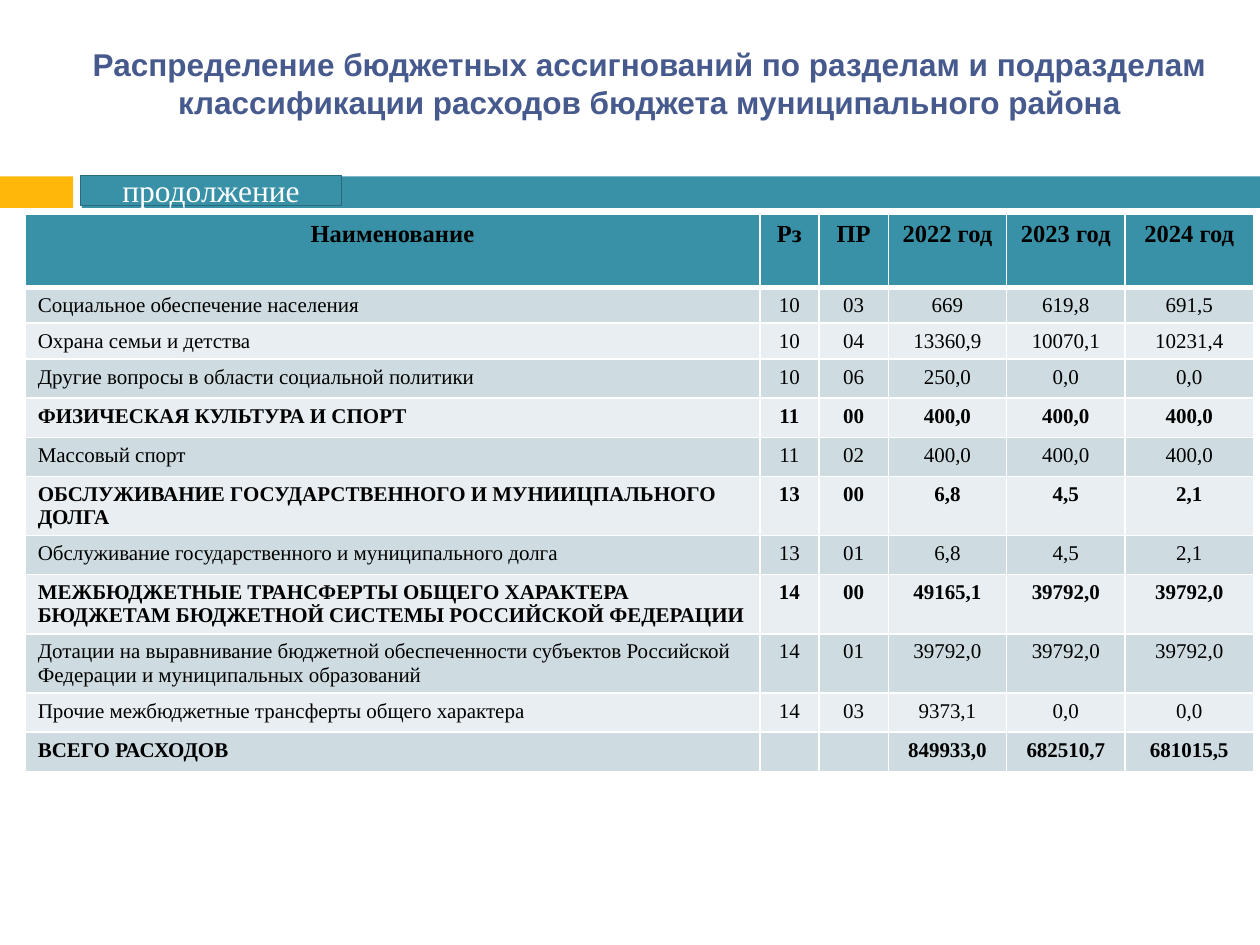
from lxml.etree import SubElement
from pptx import Presentation
from pptx.dml.color import RGBColor
from pptx.enum.shapes import MSO_SHAPE
from pptx.enum.text import MSO_ANCHOR, PP_ALIGN
from pptx.oxml.ns import qn
from pptx.util import Inches, Pt

THEME = {
    "gold": "FEB80A", "teal": "3891A7", "edge": "296B7C", "title": "475A8D",
    "bands": ("E8EEF1", "CEDCE1"), "white": "FFFFFF", "black": "000000",
    "sans": "Arial", "serif": "Times New Roman",
    "big": 18, "head": 14, "body": 12,
}


def style(para, font, size, color, bold=False, align=PP_ALIGN.CENTER):
    para.alignment = align
    for run in para.runs:
        run.font.name = font
        run.font.size = Pt(size)
        run.font.bold = bold
        run.font.color.rgb = RGBColor.from_string(color)
    if not para.runs:
        SubElement(para._p, qn("a:endParaRPr"), sz=str(size * 100))


def border(cell, side, width):
    line = SubElement(cell._tc.get_or_add_tcPr(), qn("a:ln" + side), w=str(Pt(width)))
    fill = SubElement(line, qn("a:solidFill"))
    SubElement(fill, qn("a:srgbClr"), val=THEME["white"])


deck = Presentation()
deck.slide_width, deck.slide_height = Inches(10), Inches(7.5)
slide = deck.slides.add_slide(deck.slide_layouts[5])

# Title
title = slide.shapes.title
title.left, title.top = Inches(0.43), Inches(0.25)
title.width, title.height = Inches(9.45), Inches(0.82)
frame = title.text_frame
frame.text = ("Распределение бюджетных ассигнований по разделам и подразделам "
              "классификации расходов бюджета муниципального района")
frame.word_wrap = True
frame.vertical_anchor = MSO_ANCHOR.MIDDLE
style(frame.paragraphs[0], THEME["sans"], THEME["big"], THEME["title"], True)

# Coloured strip and the tag on it
bars = [
    (0, 1.4, 0.58, 0.25, "gold", None, ""),
    (0.65, 1.4, 9.35, 0.25, "teal", None, ""),
    (0.64, 1.39, 2.07, 0.24, "teal", "edge", "продолжение"),
]
for left, top, width, height, fill, edge, text in bars:
    bar = slide.shapes.add_shape(MSO_SHAPE.RECTANGLE, Inches(left), Inches(top),
                                 Inches(width), Inches(height))
    bar.shadow.inherit = False
    bar.fill.solid()
    bar.fill.fore_color.rgb = RGBColor.from_string(THEME[fill])
    if edge:
        bar.line.color.rgb = RGBColor.from_string(THEME[edge])
        bar.line.width = Pt(0.5)
    else:
        bar.line.fill.background()
    if text:
        bar.text_frame.text = text
        bar.text_frame.vertical_anchor = MSO_ANCHOR.MIDDLE
        style(bar.text_frame.paragraphs[0], THEME["serif"], THEME["big"], THEME["white"])

# Budget table: bold flag, then the cells of each row
rows = [
    (True, "Наименование", "Рз", "ПР", "2022 год", "2023 год", "2024 год"),
    (False, "Социальное обеспечение населения", "10", "03", "669", "619,8", "691,5"),
    (False, "Охрана семьи и детства", "10", "04", "13360,9", "10070,1", "10231,4"),
    (False, "Другие вопросы в области социальной политики",
     "10", "06", "250,0", "0,0", "0,0"),
    (True, "ФИЗИЧЕСКАЯ КУЛЬТУРА И СПОРТ", "11", "00", "400,0", "400,0", "400,0"),
    (False, "Массовый спорт", "11", "02", "400,0", "400,0", "400,0"),
    (True, "ОБСЛУЖИВАНИЕ ГОСУДАРСТВЕННОГО И МУНИИЦПАЛЬНОГО ДОЛГА",
     "13", "00", "6,8", "4,5", "2,1"),
    (False, "Обслуживание государственного и муниципального долга",
     "13", "01", "6,8", "4,5", "2,1"),
    (True, "МЕЖБЮДЖЕТНЫЕ ТРАНСФЕРТЫ ОБЩЕГО ХАРАКТЕРА БЮДЖЕТАМ БЮДЖЕТНОЙ "
     "СИСТЕМЫ РОССИЙСКОЙ ФЕДЕРАЦИИ", "14", "00", "49165,1", "39792,0", "39792,0"),
    (False, "Дотации на выравнивание бюджетной обеспеченности субъектов "
     "Российской Федерации и муниципальных образований",
     "14", "01", "39792,0", "39792,0", "39792,0"),
    (False, "Прочие межбюджетные трансферты общего характера",
     "14", "03", "9373,1", "0,0", "0,0"),
    (True, "ВСЕГО РАСХОДОВ", "", "", "849933,0", "682510,7", "681015,5"),
]
widths = [5.83, 0.47, 0.55, 0.94, 0.94, 1.02]
heights = [0.58, 0.21, 0.22, 0.31, 0.31, 0.31, 0.27] + [0.31] * 5

table = slide.shapes.add_table(len(rows), len(widths), Inches(0.2), Inches(1.7),
                               Inches(sum(widths)), Inches(sum(heights))).table
for col, width in zip(table.columns, widths):
    col.width = Inches(width)
for row, height in zip(table.rows, heights):
    row.height = Inches(height)

for r, (bold, *texts) in enumerate(rows):
    head = r == 0
    for c, text in enumerate(texts):
        cell = table.cell(r, c)
        cell.text_frame.text = text
        align = PP_ALIGN.LEFT if c == 0 and not head else PP_ALIGN.CENTER
        style(cell.text_frame.paragraphs[0], THEME["serif"],
              THEME["head" if head else "body"], THEME["black"], bold, align)
        for side in "LRTB":
            thick = (head and side == "B") or (r == 1 and side == "T")
            border(cell, side, 3 if thick else 1)
        cell.fill.solid()
        shade = THEME["teal"] if head else THEME["bands"][r % 2]
        cell.fill.fore_color.rgb = RGBColor.from_string(shade)

deck.save("out.pptx")
